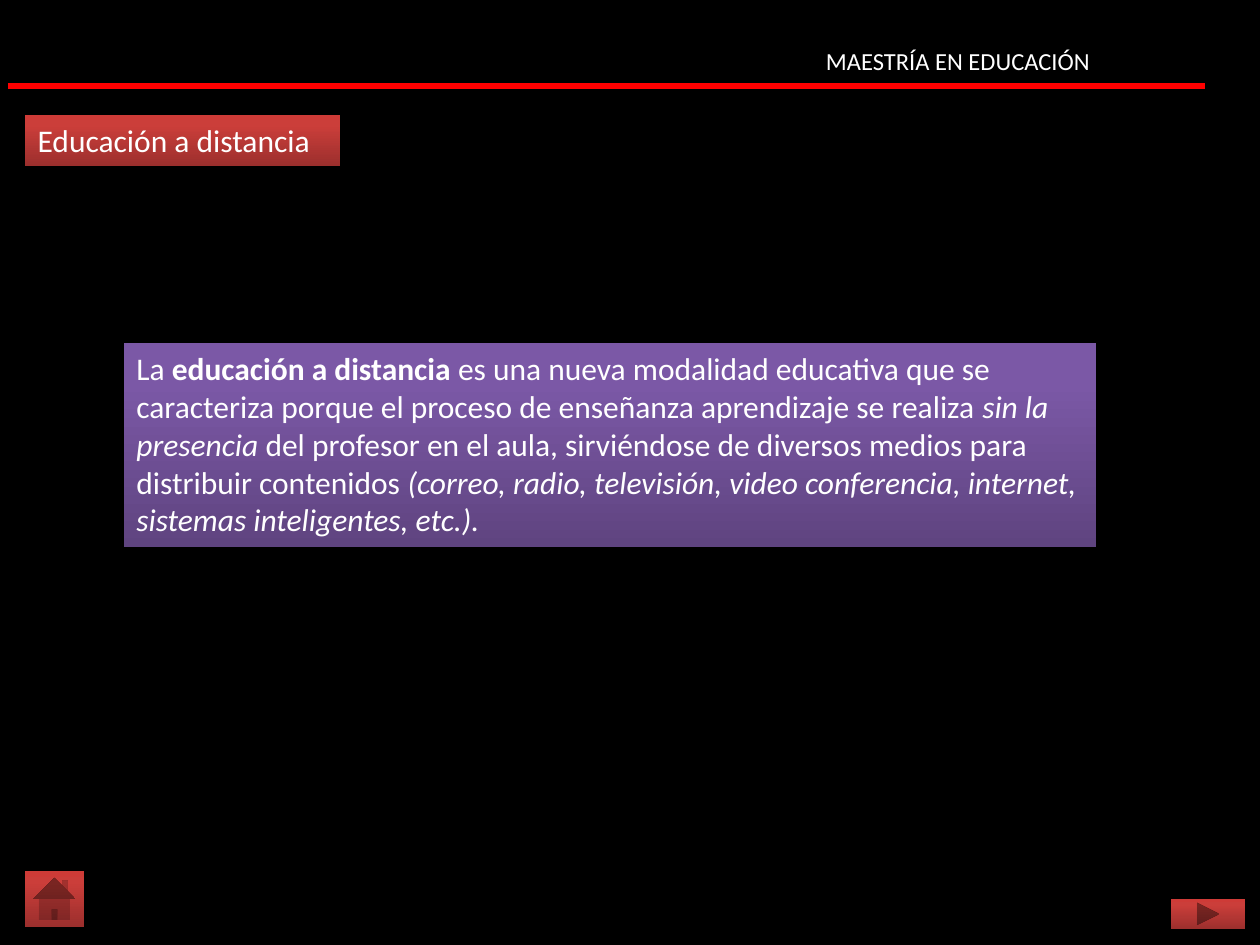
from copy import deepcopy

from lxml import etree
from pptx import Presentation
from pptx.dml.color import RGBColor
from pptx.enum.shapes import MSO_CONNECTOR, MSO_SHAPE
from pptx.enum.text import MSO_ANCHOR, PP_ALIGN
from pptx.oxml.ns import qn
from pptx.util import Pt

PX = 914400 / 126
BLACK = RGBColor(0x00, 0x00, 0x00)
WHITE = RGBColor(0xFF, 0xFF, 0xFF)
RED = RGBColor(0xFF, 0x00, 0x00)
RED_STOPS = [
    (0, RGBColor(0x9C, 0x2F, 0x2D)),
    (0.8, RGBColor(0xCB, 0x3E, 0x3A)),
    (1, RGBColor(0xCE, 0x3B, 0x37)),
]
PURPLE_STOPS = [
    (0, RGBColor(0x5F, 0x44, 0x80)),
    (0.8, RGBColor(0x7B, 0x58, 0xA6)),
    (1, RGBColor(0x7C, 0x57, 0xA8)),
]
FONT = "Calibri"
LINE = MSO_CONNECTOR.STRAIGHT
RECT = MSO_SHAPE.RECTANGLE
NEXT = MSO_SHAPE.ACTION_BUTTON_FORWARD_OR_NEXT
HOME = MSO_SHAPE.ACTION_BUTTON_HOME
LEFT, CENTER = PP_ALIGN.LEFT, PP_ALIGN.CENTER
TOP = MSO_ANCHOR.TOP

DEFINITION = [
    ("La ", False, False),
    ("educación a distancia ", True, False),
    ("es una nueva modalidad educativa que se caracteriza porque el proceso "
     "de enseñanza aprendizaje se realiza ", False, False),
    ("sin la presencia ", False, True),
    ("del profesor en el aula, sirviéndose de diversos medios para distribuir "
     "contenidos ", False, False),
    ("(correo, radio, televisión, video conferencia, internet, sistemas "
     "inteligentes, etc.).", False, True),
]


def emu(*lengths):
    """Turn px lengths into EMU."""
    return [round(n * PX) for n in lengths]


def paint(sp, stops):
    """Fill a shape with a vertical gradient, without line or shadow."""
    sp.fill.gradient()
    sp.fill.gradient_angle = 90
    gs_list = sp._element.spPr.find(qn("a:gradFill")).find(qn("a:gsLst"))
    gs_list.append(deepcopy(gs_list[-1]))
    for stop, (position, color) in zip(sp.fill.gradient_stops, stops):
        stop.position = position
        stop.color.rgb = color
    sp.line.fill.background()
    sp.shadow.inherit = False


def write(sp, runs, size, align):
    """Write (text, bold, italic) runs as one white paragraph."""
    tf = sp.text_frame
    tf.word_wrap = True
    tf.vertical_anchor = TOP
    p = tf.paragraphs[0]
    p.alignment = align
    p.font.name, p.font.size = FONT, Pt(size)
    p.font.color.rgb = WHITE
    for text, bold, italic in runs:
        r = p.add_run()
        r.text = text
        if bold:
            r.font.bold = True
        if italic:
            r.font.italic = True


def add_header(slide, x, y, w, h):
    """Place the programme name above a red rule."""
    rule = slide.shapes.add_connector(LINE, *emu(x, y + h, x + w, y + h))
    rule.line.color.rgb = RED
    rule.line.width = Pt(3)
    etree.SubElement(rule._element.spPr, qn("a:effectLst"))
    sp = slide.shapes.add_textbox(*emu(x + w - 465, y, 436, 43))
    write(sp, [("MAESTRÍA EN EDUCACIÓN", False, False)], 14, CENTER)


def add_title(slide, x, y, w, h):
    """Place the red title box."""
    sp = slide.shapes.title
    sp.left, sp.top, sp.width, sp.height = emu(x, y, w, h)
    paint(sp, RED_STOPS)
    write(sp, [("Educación a distancia", False, False)], 18, LEFT)


def add_definition(slide, x, y, w, h):
    """Place the purple definition box."""
    sp = slide.shapes.add_shape(RECT, *emu(x, y, w, h))
    paint(sp, PURPLE_STOPS)
    write(sp, DEFINITION, 18, LEFT)


def add_button(slide, kind, x, y, w, h):
    """Place a red navigation button."""
    paint(slide.shapes.add_shape(kind, *emu(x, y, w, h)), RED_STOPS)


def main():
    """Build and save the slide."""
    prs = Presentation()
    prs.slide_width, prs.slide_height = emu(1260, 945)
    slide = prs.slides.add_slide(prs.slide_layouts[5])
    slide.background.fill.solid()
    slide.background.fill.fore_color.rgb = BLACK
    add_header(slide, 8, 40, 1197, 46)
    add_title(slide, 25, 115, 315, 51)
    add_definition(slide, 124, 343, 972, 204)
    add_button(slide, NEXT, 1171, 899, 74, 30)
    add_button(slide, HOME, 25, 871, 59, 56)
    prs.save("out.pptx")


if __name__ == "__main__":
    main()
